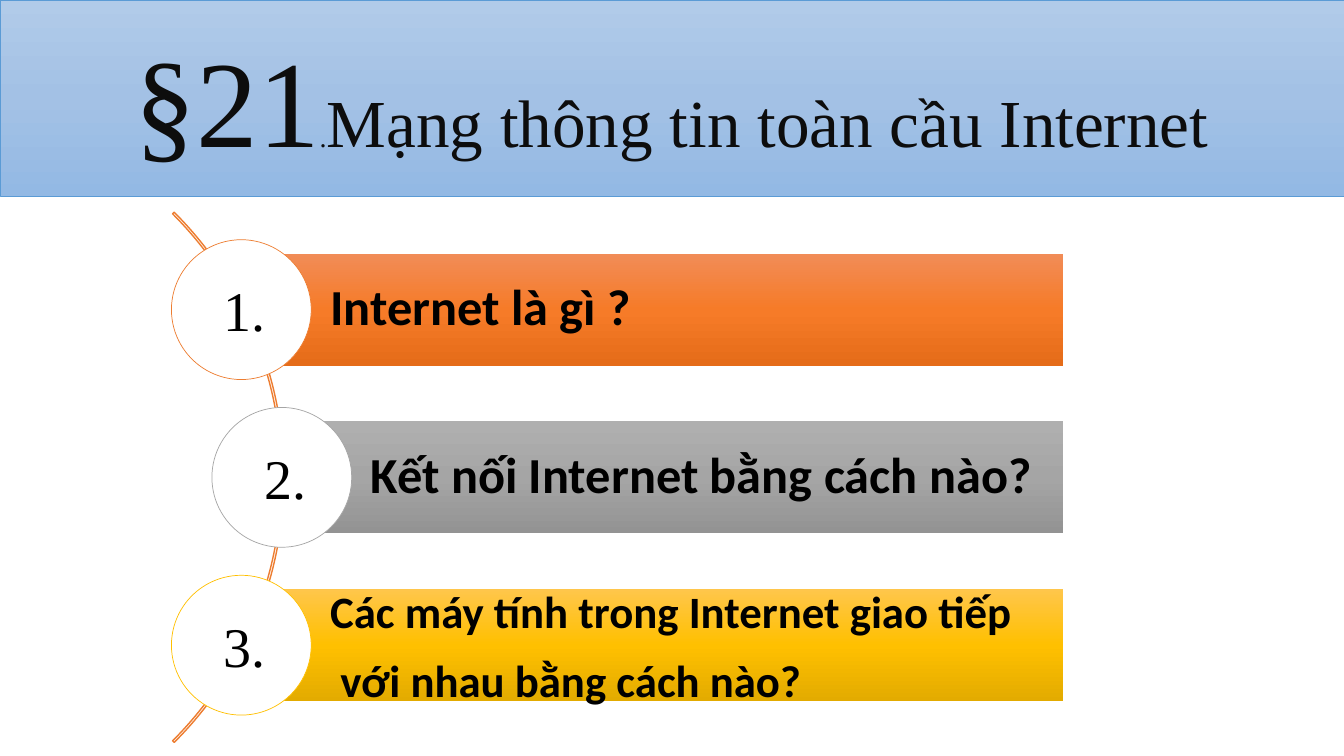
import copy
import math

import pptx
import pptx.dml.color
import pptx.enum.shapes
import pptx.enum.text
import pptx.oxml
import pptx.oxml.ns
import pptx.util
from pptx.util import Cm

SHAPES = pptx.enum.shapes.MSO_SHAPE
ALIGN = pptx.enum.text.PP_ALIGN
SERIF = "Times New Roman"

TOPICS = [
    (["Internet là gì ?"], 36, 0.9, "ED7D31", ["F18C57", "F67B28", "E56C19"]),
    (["Kết nối Internet bằng cách nào?"], 36, 0.9, "A5A5A5", ["AFAFAF", "A5A5A5", "939393"]),
    (["Các máy tính trong Internet giao tiếp", " với nhau bằng cách nào?"], 32, 1.0,
     "FFC000", ["FFC64B", "FFC000", "E3AB00"]),
]


def color(value):
    """Return the colour for a hex string."""
    return pptx.dml.color.RGBColor.from_string(value)


def paint(shape, fills, line=None, width=0.5):
    """Fill a shape with no colour, one colour or a downward gradient, and outline it."""
    shape.shadow.inherit = False
    if not fills:
        shape.fill.background()
    elif len(fills) == 1:
        shape.fill.solid()
        shape.fill.fore_color.rgb = color(fills[0])
    else:
        shape.fill.gradient()
        shape.fill.gradient_angle = 270
        stop_list = shape.element.find(".//" + pptx.oxml.ns.qn("a:gsLst"))
        for _ in fills[2:]:
            stop_list.append(copy.deepcopy(stop_list[-1]))
        for index, (stop, value) in enumerate(zip(shape.fill.gradient_stops, fills)):
            stop.color.rgb = color(value)
            stop.position = index / (len(fills) - 1)
    if line:
        shape.line.color.rgb = color(line)
        shape.line.width = pptx.util.Pt(width)
    else:
        shape.line.fill.background()


def write(paragraph, text, size, font=SERIF, ink="000000", bold=False, outline=None):
    """Add a formatted run to a paragraph."""
    run = paragraph.add_run()
    run.text = text
    run.font.name = font
    run.font.size = pptx.util.Pt(size)
    run.font.bold = bold
    run.font.color.rgb = color(ink)
    if outline:
        run.font._element.insert(0, pptx.oxml.parse_xml(
            f'<a:ln {pptx.oxml.ns.nsdecls("a")} w="9525"><a:solidFill>'
            f'<a:srgbClr val="{outline}"/></a:solidFill></a:ln>'))


def add_shape(slide, kind, left, top, width, height):
    """Add a preset shape measured in centimetres."""
    return slide.shapes.add_shape(kind, Cm(left), Cm(top), Cm(width), Cm(height))


def add_header(slide, left, top, width, height):
    """Turn the title placeholder into the lesson banner."""
    title = slide.shapes.title
    title.left, title.top, title.width, title.height = Cm(left), Cm(top), Cm(width), Cm(height)
    paint(title, ["B1CBE9", "A3C1E5", "93B9E4"], "5B9BD5")
    frame = title.text_frame
    frame.auto_size = pptx.enum.text.MSO_AUTO_SIZE.NONE
    frame.vertical_anchor = pptx.enum.text.MSO_ANCHOR.MIDDLE
    frame.paragraphs[0].alignment = ALIGN.CENTER
    for text, size in (("§21", 88), (".", 20), ("Mạng thông tin toàn cầu Internet", 48)):
        write(frame.paragraphs[0], text, size, ink="0D0D0D")


def add_bar(slide, left, top, width, height, lines, size, spacing, fills):
    """Add a topic bar with its text."""
    bar = add_shape(slide, SHAPES.RECTANGLE, left, top, width, height)
    paint(bar, fills)
    frame = bar.text_frame
    frame.word_wrap = True
    frame.vertical_anchor = pptx.enum.text.MSO_ANCHOR.MIDDLE
    frame.margin_left = Cm(2.24)
    frame.margin_top = frame.margin_right = frame.margin_bottom = Cm(0.24)
    for index, text in enumerate(lines):
        paragraph = frame.add_paragraph() if index else frame.paragraphs[0]
        paragraph.alignment = ALIGN.LEFT
        paragraph.line_spacing = spacing
        paragraph.space_before = pptx.util.Pt(0.35 * size if index else 0)
        write(paragraph, text, size, font="Calibri", bold=True, outline="FFFFFF")


def add_number(slide, center, middle, diameter, text, line):
    """Add a numbered circle around a centre point."""
    circle = add_shape(slide, SHAPES.OVAL, center - diameter / 2, middle - diameter / 2,
                       diameter, diameter)
    paint(circle, ["FFFFFF"], line)
    width, height = 1.58, 1.96
    label = slide.shapes.add_textbox(Cm(center + 0.1 - width / 2), Cm(middle - height / 2),
                                     Cm(width), Cm(height))
    label.text_frame.word_wrap = False
    write(label.text_frame.paragraphs[0], text, 40)


def add_agenda(slide, left, top, width, height):
    """Place the arc and the numbered topics along it."""
    diameter = height * math.sqrt(2)
    arc = add_shape(slide, SHAPES.BLOCK_ARC, left + 0.07 - diameter * (0.5 + math.sqrt(2) / 4),
                    top + height / 2 - diameter / 2, diameter, diameter)
    for index, value in enumerate((189, 27, 0.003)):
        arc.adjustments[index] = value
    paint(arc, [], "ED7D31", 1)

    pitch = height / 3.16
    bar_height = pitch * 2 / 3
    circle = bar_height * 1.25
    for index, (lines, size, spacing, line, fills) in enumerate(TOPICS):
        center = left + circle / 2 + (1.02 if index == 1 else 0)
        middle = top + height / 2 + (index - 1) * pitch
        add_bar(slide, center, middle - bar_height / 2, left + width - center, bar_height,
                lines, size, spacing, fills)
        add_number(slide, center, middle, circle, f"{index + 1}.", line)


def main():
    """Build and save the presentation."""
    presentation = pptx.Presentation()
    presentation.slide_width, presentation.slide_height = Cm(33.87), Cm(19.05)
    slide = presentation.slides.add_slide(presentation.slide_layouts[5])
    add_header(slide, 0, 0, 33.87, 4.95)
    add_agenda(slide, 4.32, 5.35, 22.48, 13.36)
    presentation.save("out.pptx")


if __name__ == "__main__":
    main()
